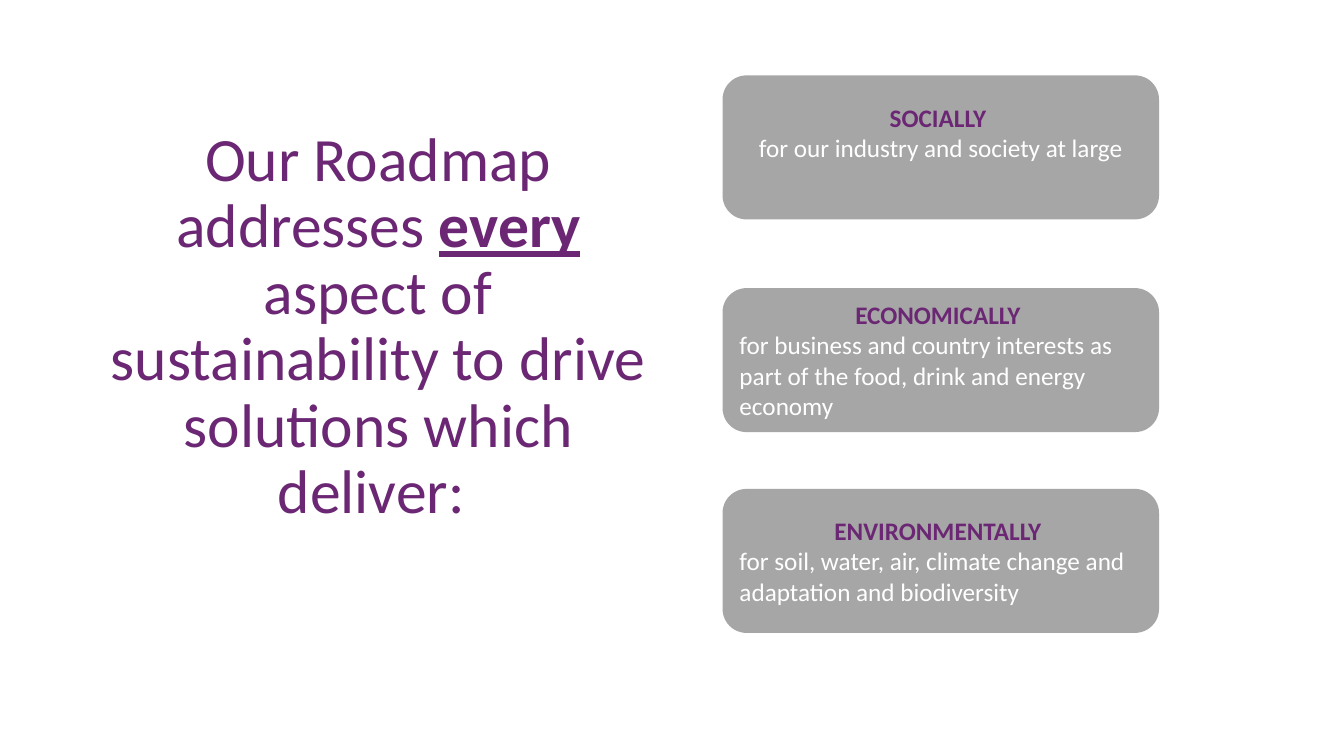
import pptx
import pptx.util
import pptx.dml.color
import pptx.enum.shapes
import pptx.enum.text

Cm = pptx.util.Cm
ALIGN = pptx.enum.text.PP_ALIGN
MIDDLE = pptx.enum.text.MSO_ANCHOR.MIDDLE
COLORS = {"purple": "6B2774", "grey": "A6A6A6", "white": "FFFFFF"}

# Card top, heading, text, text alignment, bottom inset
CARDS = [
    (1.9, "SOCIALLY ", "for our industry and society at large", ALIGN.CENTER, 0.89),
    (7.26, "ECONOMICALLY ",
     "for business and country interests as part of the food, drink and energy economy",
     ALIGN.LEFT, 0.13),
    (12.32, "ENVIRONMENTALLY ",
     "for soil, water, air, climate change and adaptation and biodiversity",
     ALIGN.LEFT, 0.13),
]


def color(name):
    return pptx.dml.color.RGBColor.from_string(COLORS[name])


def add_run(para, text, size, ink, bold=False):
    run = para.add_run()
    run.text = text
    font = run.font
    font.name = "Calibri"
    font.size = pptx.util.Pt(size)
    font.bold = bold
    font.color.rgb = color(ink)
    return run


def add_title(slide, left, top, width, height):
    title = slide.shapes.title
    title.left, title.top = Cm(left), Cm(top)
    title.width, title.height = Cm(width), Cm(height)
    frame = title.text_frame
    frame.word_wrap = True
    frame.auto_size = pptx.enum.text.MSO_AUTO_SIZE.NONE
    frame.vertical_anchor = MIDDLE
    frame.margin_bottom = Cm(1.8)
    para = frame.paragraphs[0]
    para.alignment = ALIGN.CENTER
    para.line_spacing = 0.9
    add_run(para, "Our Roadmap addresses ", 44, "purple")
    add_run(para, "every", 44, "purple", True).font.underline = True
    add_run(para, " aspect of sustainability to drive solutions which deliver: ",
            44, "purple")


def add_card(slide, left, top, width, height, head, text, align, inset):
    card = slide.shapes.add_shape(
        pptx.enum.shapes.MSO_SHAPE.ROUNDED_RECTANGLE,
        Cm(left), Cm(top), Cm(width), Cm(height))
    card.shadow.inherit = False
    card.fill.solid()
    card.fill.fore_color.rgb = color("grey")
    card.line.fill.background()
    frame = card.text_frame
    frame.word_wrap = True
    frame.vertical_anchor = MIDDLE
    frame.margin_bottom = Cm(inset)
    first = frame.paragraphs[0]
    first.alignment = ALIGN.CENTER
    add_run(first, head, 18, "purple", True)
    body = frame.add_paragraph()
    body.alignment = align
    add_run(body, text, 18, "white")


def main():
    deck = pptx.Presentation()
    deck.slide_width, deck.slide_height = Cm(33.87), Cm(19.05)
    slide = deck.slides.add_slide(deck.slide_layouts[5])

    # Statement on the left
    add_title(slide, 2.13, 2.67, 14.81, 12.83)

    # Cards on the right
    for top, *parts in CARDS:
        add_card(slide, 18.21, top, 11, 3.63, *parts)

    deck.save("out.pptx")


if __name__ == "__main__":
    main()
